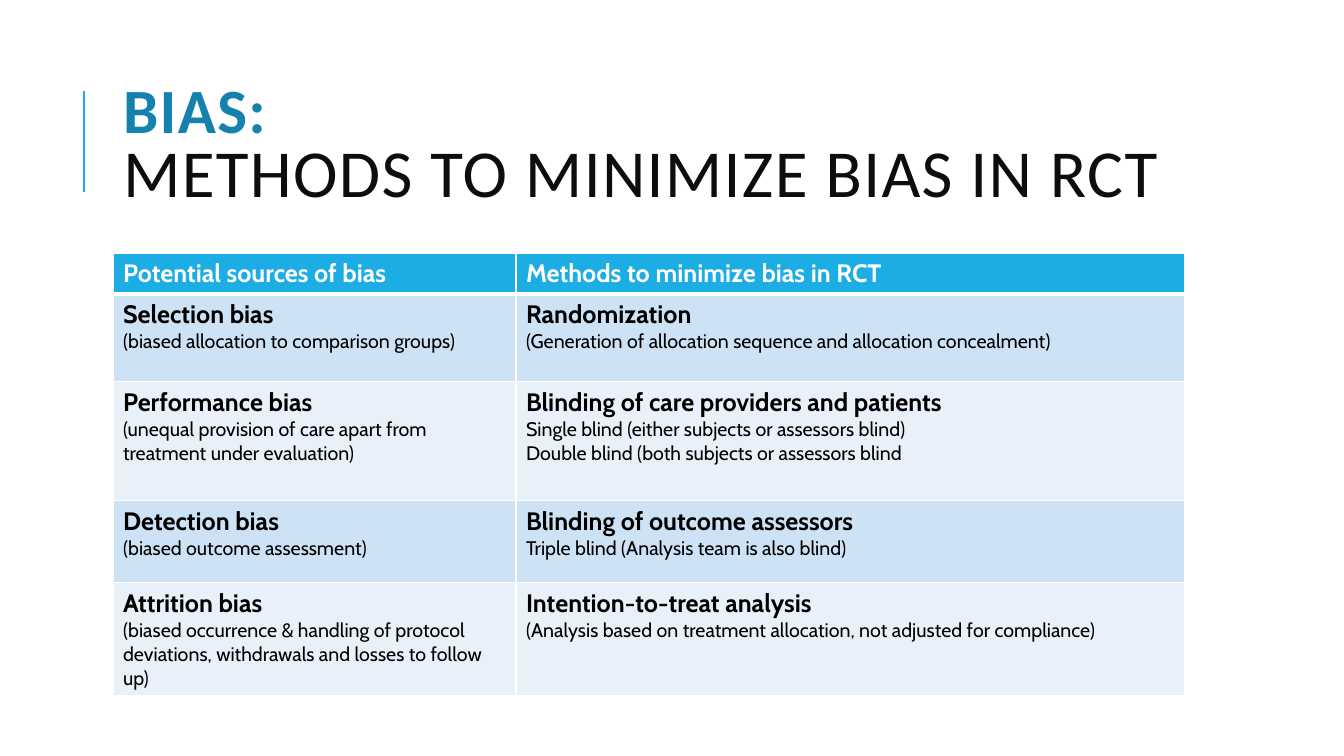
"""Build the slide on methods to minimize bias in RCT."""
import lxml.etree
import pptx
import pptx.dml.color
import pptx.enum.shapes
import pptx.enum.text
import pptx.oxml
import pptx.oxml.ns
import pptx.util

PX = 914400 / 100.8
COLORS = {"accent": "1CADE4", "title": "1482AC", "ink": "0D0D0D", "black": "000000",
          "white": "FFFFFF", "dark band": "CDE3F5", "light band": "E8F1FA"}
COLUMN_WIDTHS = [403, 669]
ROW_HEIGHTS = [40, 88, 119, 82, 112]
ROWS = [
    [["Potential sources of bias"], ["Methods to minimize bias in RCT"]],
    [["Selection bias", "(biased allocation to comparison groups)"],
     ["Randomization", "(Generation of allocation sequence and allocation concealment)"]],
    [["Performance bias", "(unequal provision of care apart from treatment under evaluation)"],
     ["Blinding of care providers and patients",
      "Single blind (either subjects or assessors blind)",
      "Double blind (both subjects or assessors blind"]],
    [["Detection bias", "(biased outcome assessment)"],
     ["Blinding of outcome assessors", "Triple blind (Analysis team is also blind)"]],
    [["Attrition bias",
      "(biased occurrence & handling of protocol deviations, withdrawals and losses to follow up)"],
     ["Intention-to-treat analysis",
      "(Analysis based on treatment allocation, not adjusted for compliance)"]],
]


def px(*lengths):
    return [pptx.util.Emu(round(length * PX)) for length in lengths]


def add_span(para, text, color, **formats):
    span = para.add_run()
    span.text = text
    for name, value in formats.items():
        setattr(span.font, name, value)
    span.font.color.rgb = pptx.dml.color.RGBColor.from_string(COLORS[color])
    return span


deck = pptx.Presentation()
deck.slide_width, deck.slide_height = px(1344, 756)
page = deck.slides.add_slide(deck.slide_layouts[5])

title = page.shapes.title
title.left, title.top, title.width, title.height = px(113, 65, 1072, 165)
for name, value in {"word_wrap": True, "auto_size": pptx.enum.text.MSO_AUTO_SIZE.NONE,
                    "vertical_anchor": pptx.enum.text.MSO_ANCHOR.MIDDLE}.items():
    setattr(title.text_frame, name, value)
para = title.text_frame.paragraphs[0]
para.alignment = pptx.enum.text.PP_ALIGN.LEFT
para.line_spacing = 0.8
title_spans = [add_span(para, "BIAS:", "title", name="Calibri", size=pptx.util.Pt(45), bold=True)]
para.add_line_break()
title_spans.append(add_span(para, "METHODS TO MINIMIZE BIAS IN RCT", "ink",
                            name="Calibri", size=pptx.util.Pt(48), bold=False))
for span in title_spans:
    span.font._element.set("spc", "100")

rule = page.shapes.add_connector(pptx.enum.shapes.MSO_CONNECTOR.STRAIGHT, *px(84, 192, 84, 91))
rule.line.color.rgb = pptx.dml.color.RGBColor.from_string(COLORS["accent"])
rule.line.width = pptx.util.Pt(1.5)
lxml.etree.SubElement(rule._element.spPr, pptx.oxml.ns.qn("a:effectLst"))

frame = page.shapes.add_table(len(ROWS), len(COLUMN_WIDTHS),
                              *px(113, 253, sum(COLUMN_WIDTHS), sum(ROW_HEIGHTS)))
table = frame.table
for column, width in zip(table.columns, px(*COLUMN_WIDTHS)):
    column.width = width
for row, height in zip(table.rows, px(*ROW_HEIGHTS)):
    row.height = height

for row_index, row in enumerate(ROWS):
    header = row_index == 0
    band = "accent" if header else "dark band" if row_index % 2 else "light band"
    borders = {"L": 1, "R": 1, "T": 3 if row_index == 1 else 1, "B": 3 if header else 1}
    for column_index, lines in enumerate(row):
        cell = table.cell(row_index, column_index)
        cell.fill.solid()
        cell.fill.fore_color.rgb = pptx.dml.color.RGBColor.from_string(COLORS[band])
        for line_index, line in enumerate(lines):
            heading = line_index == 0
            para = cell.text_frame.paragraphs[0] if heading else cell.text_frame.add_paragraph()
            add_span(para, line, "white" if header else "black", name="Cabin",
                     size=pptx.util.Pt(18 if heading else 14), bold=heading)
        properties = cell._tc.get_or_add_tcPr()
        for position, (side, points) in enumerate(borders.items()):
            properties.insert(position, pptx.oxml.parse_xml(
                f'<a:ln{side} {pptx.oxml.ns.nsdecls("a")} w="{points * 12700}"><a:solidFill>'
                f'<a:srgbClr val="{COLORS["white"]}"/></a:solidFill></a:ln{side}>'))

deck.save("out.pptx")
